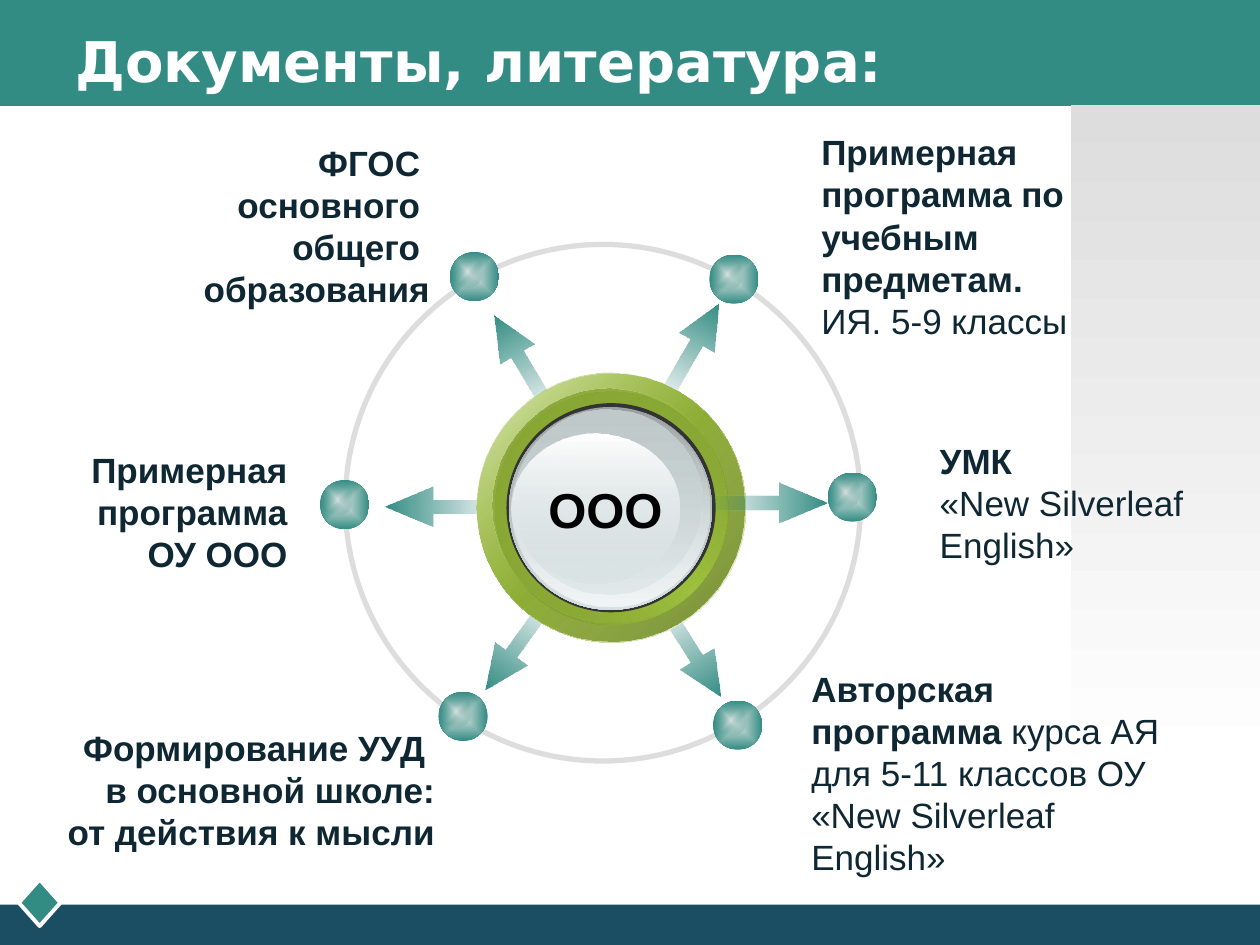
"""Build a radial slide of documents and literature around a central button."""
import pptx
import pptx.util
import pptx.dml.color
import pptx.enum.shapes
import pptx.enum.text
import pptx.oxml
import pptx.oxml.ns

Inches = pptx.util.Inches
SHAPE = pptx.enum.shapes.MSO_SHAPE
ALIGN = pptx.enum.text.PP_ALIGN

COLORS = {
    "teal": "328C83", "deep_teal": "30857D", "navy": "1B4E63", "white": "FFFFFF",
    "black": "000000", "gray": "DDDDDD", "text": "0E2732",
    "mist": "D6E1DF", "lime": "9DC03C", "olive": "70892B", "moss": "78932E",
    "leaf": "819E31", "charcoal": "333333", "steel": "99A1A2", "silver": "D6E1E2",
    "pearl": "F2F5F5", "pewter": "C1CBCC",
}

TITLE = "Документы, литература:"
CENTER_LABEL = "ООО"

LABELS = [
    ((6.42, 0.99, 2.94, 1.78), ALIGN.LEFT, [
        [("Примерная программа по учебным предметам.", True)],
        [("ИЯ. 5-9 классы", False)]]),
    ((0.2, 1.07, 3.31, 1.45), ALIGN.RIGHT, [
        [("ФГОС ", True)], [("основного ", True)],
        [("общего ", True)], [("образования", True)]]),
    ((6.34, 5.25, 2.99, 1.78), ALIGN.LEFT, [
        [("Авторская программа ", True), ("курса АЯ для 5-11 классов ОУ", False)],
        [("«New Silverleaf English»", False)]]),
    ((0.51, 3.51, 1.87, 1.11), ALIGN.RIGHT, [
        [("Примерная программа ОУ ООО", True)]]),
    ((0, 5.72, 3.55, 1.11), ALIGN.RIGHT, [
        [("Формирование УУД ", True)], [("в основной школе:", True)],
        [("от действия к мысли", True)]]),
    ((7.36, 3.44, 2.48, 1.45), ALIGN.LEFT, [
        [("УМК", True)], [("«New Silverleaf English»", False)]]),
]

ARROWS = [
    (5.05, 2.63, 0.87, 299.6), (5.05, 5, 0.87, 57.8), (3.71, 2.72, 0.87, 239.5),
    (3.67, 4.96, 0.87, 125.6), (3.05, 3.86, 0.94, 180),
]
RIGHT_ARROW = (5.63, 3.83, 0.94, 0)
NODES = [(3.57, 2), (2.54, 3.81), (3.48, 5.49), (5.63, 2.02), (5.66, 5.56)]
RIGHT_NODE = (6.57, 3.75)

BUTTON_DISCS = [
    ((3.79, 2.97, 2.13, 2.13), [(0, "white", 100), (50, "lime", 100), (100, "white", 100)], 45),
    ((3.78, 2.96, 2.13, 2.13), [(0, "lime", 32), (100, "olive", 100)], 45),
    ((3.93, 3.11, 1.85, 1.85), [(0, "moss", 100), (50, "lime", 100), (100, "moss", 100)], 315),
    ((3.91, 3.08, 1.85, 1.85), [(0, "leaf", 100), (100, "lime", 0)], 45),
    ((4.02, 3.2, 1.66, 1.66), "charcoal", None),
    ((4.04, 3.23, 1.61, 1.61), [(0, "steel", 100), (100, "silver", 100)], 90),
    ((4.06, 3.24, 1.57, 1.57), [(0, "silver", 0), (100, "pearl", 100)], 90),
    ((4.08, 3.25, 1.49, 1.47), [(0, "pewter", 100), (100, "silver", 48)], 90),
    ((4.06, 3.44, 1.33, 1.19), [(0, "white", 100), (100, "silver", 38)], 90),
]


def rgb(name):
    return pptx.dml.color.RGBColor.from_string(COLORS[name])


def set_gradient(shape, stops, angle):
    """Fill with (position, colour, opacity) stops; no angle means radial."""
    stop_xml = "".join(
        f'<a:gs pos="{position * 1000}"><a:srgbClr val="{COLORS[color]}">'
        f'<a:alpha val="{opacity * 1000}"/></a:srgbClr></a:gs>'
        for position, color, opacity in stops)
    if angle is None:
        direction = ('<a:path path="shape"><a:fillToRect l="50000" t="50000" '
                     'r="50000" b="50000"/></a:path>')
    else:
        direction = f'<a:lin ang="{angle * 60000}" scaled="1"/>'
    gradient = pptx.oxml.parse_xml(
        f'<a:gradFill {pptx.oxml.ns.nsdecls("a")} rotWithShape="1">'
        f'<a:gsLst>{stop_xml}</a:gsLst>{direction}</a:gradFill>')
    shape.fill.background()
    properties = shape.fill._xPr
    properties.replace(properties.find(pptx.oxml.ns.qn("a:noFill")), gradient)


def add_shape(shapes, kind, box, fill=None, angle=None, line=None, rotation=0, adjustments=()):
    shape = shapes.add_shape(kind, *map(Inches, box))
    shape.shadow.inherit = False
    shape.rotation = rotation
    for index, value in enumerate(adjustments):
        shape.adjustments[index] = value
    if fill is None:
        shape.fill.background()
    elif isinstance(fill, str):
        shape.fill.solid()
        shape.fill.fore_color.rgb = rgb(fill)
    else:
        set_gradient(shape, fill, angle)
    if line:
        color, width = line
        shape.line.color.rgb = rgb(color)
        shape.line.width = pptx.util.Pt(width)
    else:
        shape.line.fill.background()
    return shape


def write_text(shape, paragraphs, size, color, align=ALIGN.LEFT, font="Arial", wrap=True,
               anchor=pptx.enum.text.MSO_ANCHOR.TOP):
    frame = shape.text_frame
    frame.word_wrap = wrap
    frame.vertical_anchor = anchor
    for index, runs in enumerate(paragraphs):
        paragraph = frame.add_paragraph() if index else frame.paragraphs[0]
        paragraph.alignment = align
        for text, bold in runs:
            run = paragraph.add_run()
            run.text = text
            run.font.name = font
            run.font.size = pptx.util.Pt(size)
            run.font.bold = bold
            run.font.color.rgb = rgb(color)


def add_text(shapes, box, paragraphs, size, color, **options):
    write_text(shapes.add_textbox(*map(Inches, box)), paragraphs, size, color, **options)


def add_arrow(shapes, left, top, length, rotation):
    head = 1.21 if length > 0.9 else 1.11
    add_shape(shapes, SHAPE.RIGHT_ARROW, (left, top, length, 0.32),
              [(0, "deep_teal", 0), (100, "teal", 100)], 0,
              rotation=rotation, adjustments=(0.352, head))


def add_node(shapes, left, top):
    group = shapes.add_group_shape()
    for box, opacity in (((left, top, 0.39, 0.39), 100),
                         ((left + 0.02, top + 0.03, 0.24, 0.25), 0)):
        add_shape(group.shapes, SHAPE.OVAL, box, [(0, "mist", 100), (100, "teal", opacity)])


def add_background(shapes):
    add_shape(shapes, SHAPE.RECTANGLE, (0, 0, 10, 0.84), "teal")
    add_shape(shapes, SHAPE.RECTANGLE, (0, 7.18, 10, 0.33), "navy")
    add_shape(shapes, SHAPE.DIAMOND, (0.15, 6.98, 0.33, 0.37), "teal", line=("white", 2.25))
    add_shape(shapes, SHAPE.RECTANGLE, (8.5, 0.83, 1.5, 5.25),
              [(0, "gray", 100), (100, "white", 100)], 90)


def main():
    presentation = pptx.Presentation()
    presentation.slide_width = Inches(10)
    presentation.slide_height = Inches(7.5)
    shapes = presentation.slides.add_slide(presentation.slide_layouts[6]).shapes
    middle = pptx.enum.text.MSO_ANCHOR.MIDDLE

    add_background(shapes)
    add_text(shapes, (0.5, 0.17, 9, 0.62), [[(TITLE, True)]], 32, "white",
             font="DejaVu Sans", anchor=middle)
    for arrow in ARROWS:
        add_arrow(shapes, *arrow)
    add_shape(shapes, SHAPE.OVAL, (2.74, 1.94, 4.09, 4.1), line=("gray", 3))
    for node in NODES:
        add_node(shapes, *node)
    for box, fill, angle in BUTTON_DISCS:
        disc = add_shape(shapes, SHAPE.OVAL, box, fill, angle)
    write_text(disc, [[(CENTER_LABEL, True)]], 28, "black", wrap=False, anchor=middle)
    add_arrow(shapes, *RIGHT_ARROW)
    add_node(shapes, *RIGHT_NODE)
    for box, align, paragraphs in LABELS:
        add_text(shapes, box, paragraphs, 20, "text", align=align)
    presentation.save("out.pptx")


if __name__ == "__main__":
    main()
